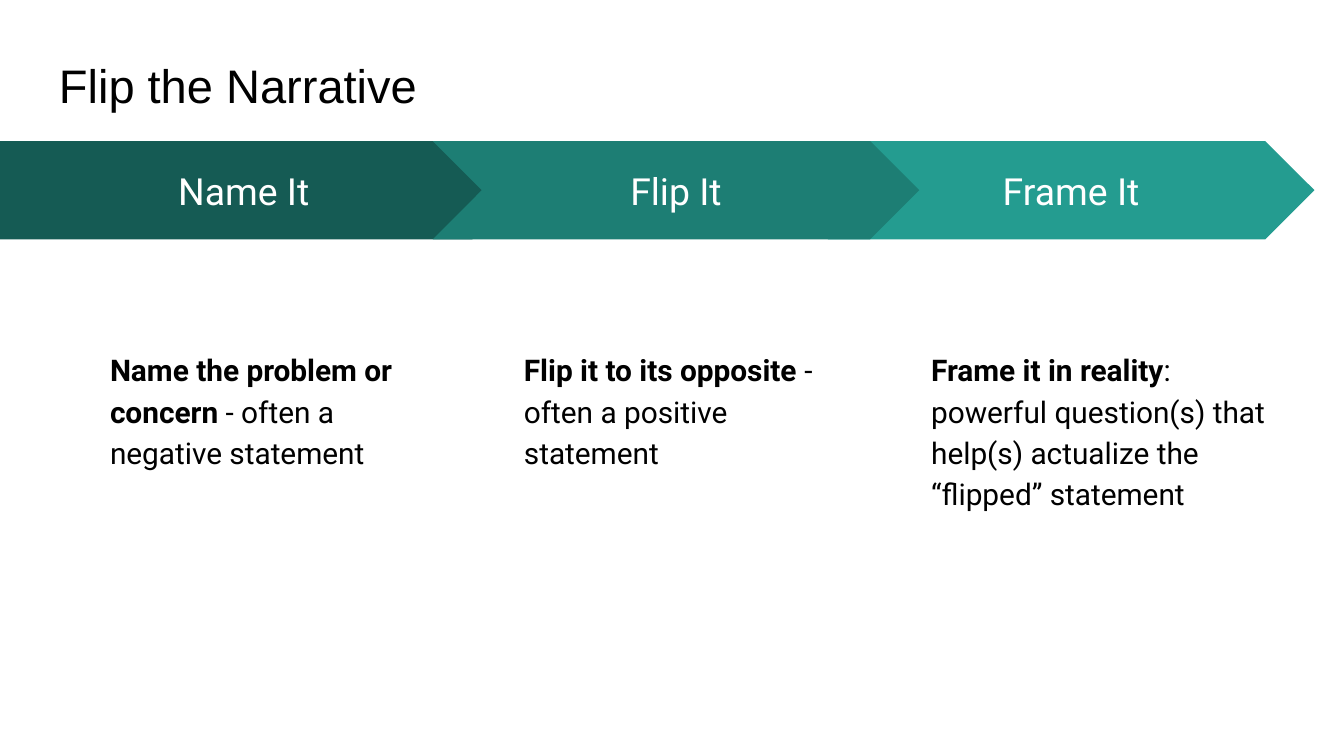
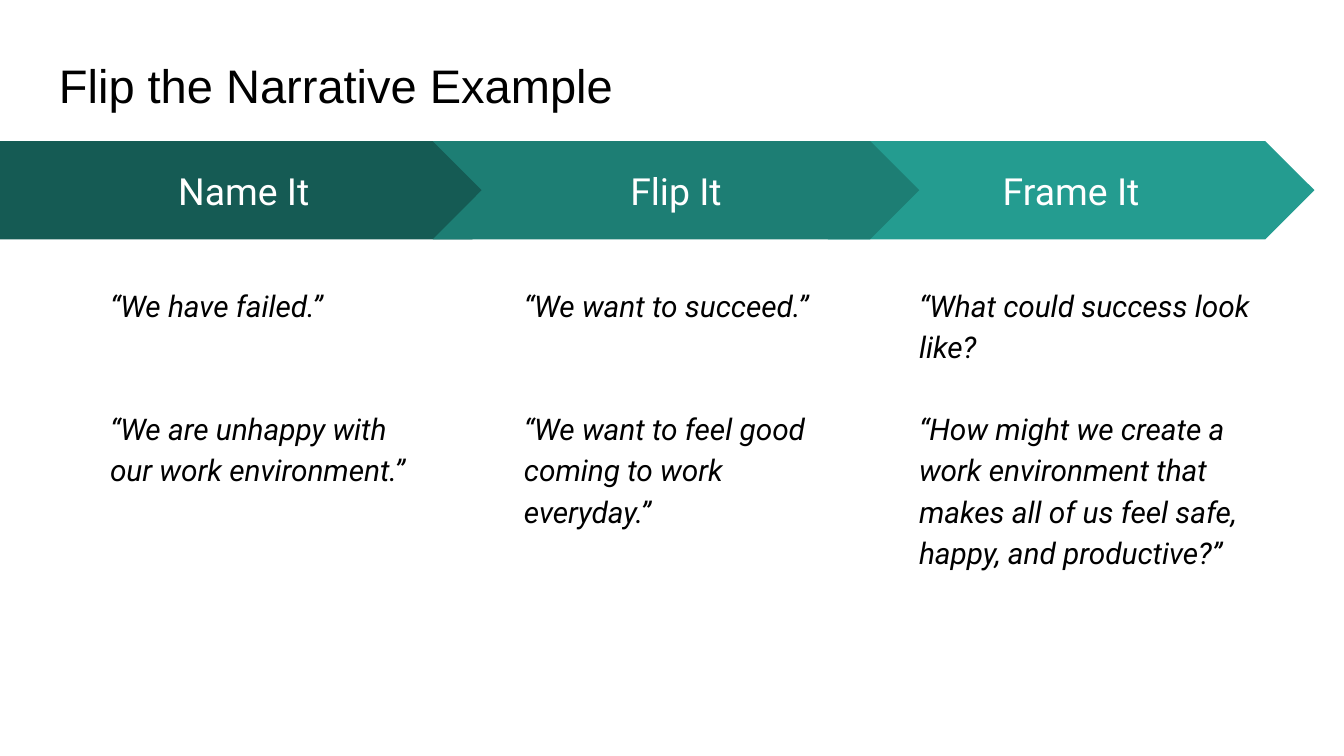
from pptx import Presentation
from pptx.dml.color import RGBColor
from pptx.enum.shapes import MSO_SHAPE as Preset
from pptx.enum.text import MSO_ANCHOR as Anchor, PP_ALIGN as Align
from pptx.util import Inches, Pt

WIDTH, HEIGHT = Inches(10), Inches(5.625)
COLORS = {"text": "000000", "label": "FFFFFF", "background": "FFFFFF",
          "name": "155B54", "flip": "1D7E74", "frame": "249C90"}
TITLE_FONT, BODY_FONT = "Arial", "Roboto"
BODY_LINE = 22  # height of one body line in points

# Places are percentages of the slide's width and height
TITLE_BOX = (3.4, 5.69, 93.2, 11.2)
BAND_TOP, BAND_HEIGHT = 18.67, 12.98
CHEVRON_LEFT, CHEVRON_STEP, CHEVRON_WIDTH = 32.2, 29.4, 36.2
BODY_HEIGHT = 50.84

# Band steps from back to front: label, colour, preset, left, width
STEPS = [
    ("Frame It", "frame", Preset.CHEVRON, CHEVRON_LEFT + CHEVRON_STEP, CHEVRON_WIDTH),
    ("Name It ", "name", Preset.PENTAGON, 0, 38.8),
    ("Flip It", "flip", Preset.CHEVRON, CHEVRON_LEFT, CHEVRON_WIDTH),
]

# Definition columns: left, width, bold lead, explanation
DEFINITIONS = [
    (7.2, 24.5, "Name the problem or concern", " - often a negative statement"),
    (38, 24.5, "Flip it to its opposite", " - often a positive statement"),
    (68.3, 27.7, "Frame it in reality",
     ": powerful question(s) that help(s) actualize the “flipped” statement"),
]

# Example columns: left, width, lines between the quotes, quotes
EXAMPLES = [
    (7.2, 24.5, 2, ["“We have failed.”", "“We are unhappy with our work environment.”"]),
    (38, 24.5, 2, ["“We want to succeed.”", "“We want to feel good coming to work everyday.”"]),
    (67.4, 27.7, 1, ["“What could success look like?",
                     "“How might we create a work environment that makes all of us "
                     "feel safe, happy, and productive?”"]),
]


def color(name):
    return RGBColor.from_string(COLORS[name])


def place(left, top, width, height):
    return [int(size * share / 100) for size, share in
            zip((WIDTH, HEIGHT, WIDTH, HEIGHT), (left, top, width, height))]


def set_frame(shape, anchor):
    frame = shape.text_frame
    frame.word_wrap = True
    frame.vertical_anchor = anchor
    frame.margin_left = frame.margin_right = Inches(0.1)
    frame.margin_top = frame.margin_bottom = Inches(0.1)
    return frame


def add_run(paragraph, text, size, font=BODY_FONT, ink="text", bold=False, italic=False):
    run = paragraph.add_run()
    run.text = text
    run.font.name, run.font.size = font, Pt(size)
    run.font.bold, run.font.italic = bold, italic
    run.font.color.rgb = color(ink)


def add_text_frame(slide, box):
    return set_frame(slide.shapes.add_textbox(*place(*box)), Anchor.TOP)


def add_step(slide, label, fill, preset, left, width):
    shape = slide.shapes.add_shape(preset, *place(left, BAND_TOP, width, BAND_HEIGHT))
    shape.shadow.inherit = False
    shape.adjustments[0] = 0.5
    shape.fill.solid()
    shape.fill.fore_color.rgb = color(fill)
    shape.line.fill.background()
    paragraph = set_frame(shape, Anchor.MIDDLE).paragraphs[0]
    paragraph.alignment = Align.CENTER
    add_run(paragraph, label, 20, ink="label")


def add_body(slide, left, top, width, paragraphs, gap_lines=0):
    """Each paragraph is a list of (text, bold, italic) runs."""
    frame = add_text_frame(slide, (left, top, width, BODY_HEIGHT))
    for index, runs in enumerate(paragraphs):
        paragraph = frame.add_paragraph() if index else frame.paragraphs[0]
        paragraph.line_spacing = 1.15
        if index:
            paragraph.space_before = Pt(gap_lines * BODY_LINE)
        for text, bold, italic in runs:
            add_run(paragraph, text, 16, bold=bold, italic=italic)


def add_narrative_slide(presentation, title):
    slide = presentation.slides.add_slide(presentation.slide_layouts[6])
    slide.background.fill.solid()
    slide.background.fill.fore_color.rgb = color("background")
    add_run(add_text_frame(slide, TITLE_BOX).paragraphs[0], title, 25.2, TITLE_FONT)
    for step in STEPS:
        add_step(slide, *step)
    return slide


def main():
    presentation = Presentation()
    presentation.slide_width, presentation.slide_height = WIDTH, HEIGHT

    # The three steps explained
    slide = add_narrative_slide(presentation, "Flip the Narrative")
    for left, width, lead, explanation in DEFINITIONS:
        add_body(slide, left, 44.09, width,
                 [[(lead, True, False), (explanation, False, False)]])

    # The three steps applied
    slide = add_narrative_slide(presentation, "Flip the Narrative Example")
    for left, width, gap_lines, quotes in EXAMPLES:
        add_body(slide, left, 35.56, width,
                 [[(quote, False, True)] for quote in quotes], gap_lines)

    presentation.save("out.pptx")


if __name__ == "__main__":
    main()
